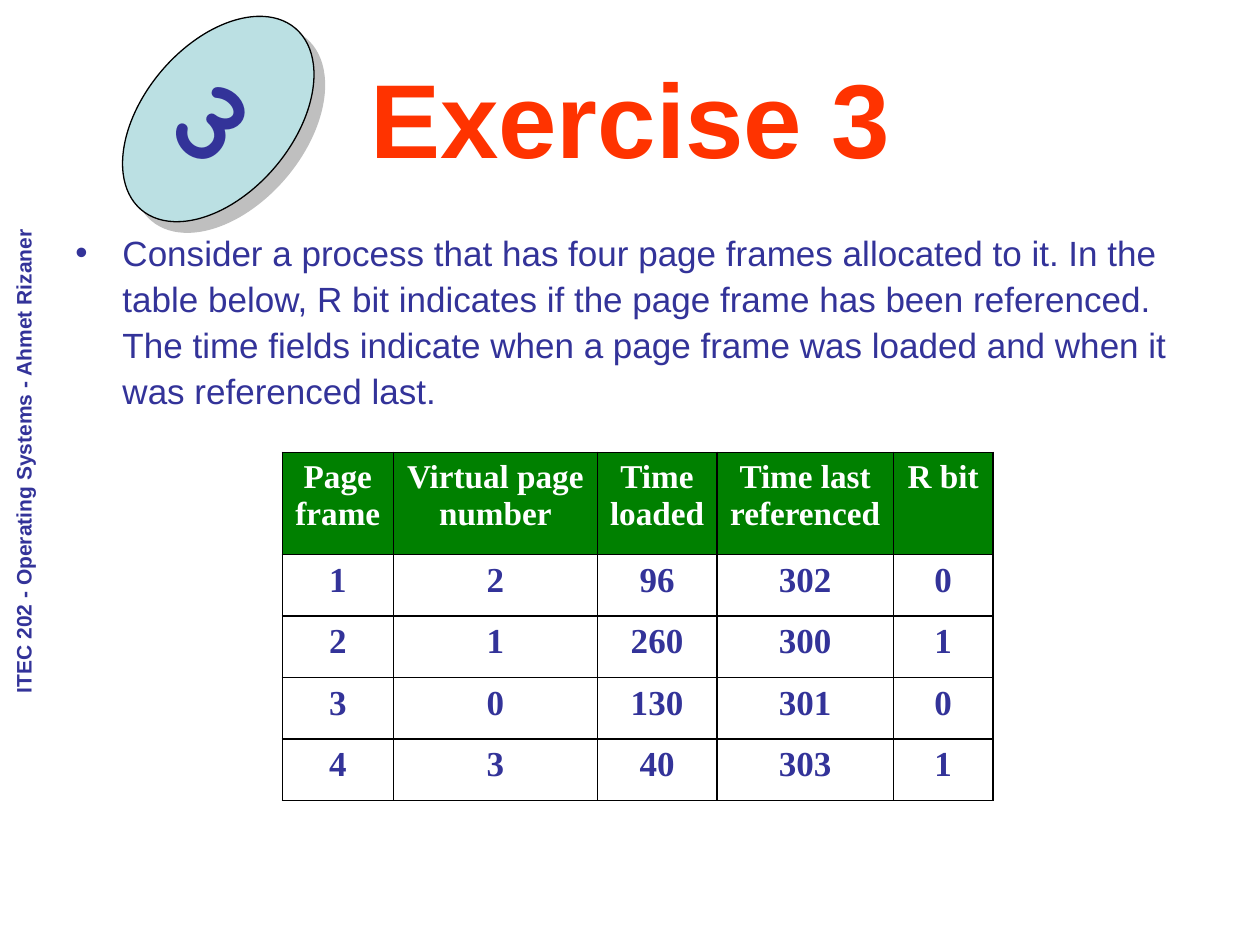
from dataclasses import dataclass

from lxml import etree
from pptx import Presentation
from pptx import util as u
from pptx.dml.color import RGBColor
from pptx.enum import shapes, text
from pptx.oxml import ns

Cm, Pt = u.Cm, u.Pt


@dataclass(frozen=True)
class Theme:
    ink: str = "333399"
    head: str = "FF3300"
    green: str = "008000"
    pale: str = "BBE0E3"
    white: str = "FFFFFF"
    line: str = "000000"
    shade: str = "808080"
    sans: str = "Arial"
    serif: str = "Times New Roman"
    comic: str = "Comic Neue"
    title: int = 60
    body: int = 20
    side: int = 12
    badge: int = 66
    label: int = 19


T = Theme()
HEADS = ["Page\nframe", "Virtual page\nnumber", "Time\nloaded",
         "Time last\nreferenced", "R bit"]
ROWS = [(1, 2, 96, 302, 0), (2, 1, 260, 300, 1),
        (3, 0, 130, 301, 0), (4, 3, 40, 303, 1)]
COLS = [2.24, 4.11, 2.41, 3.56, 2.01]
HEAD_H, ROW_H = 2.06, 1.24
TASK = ("Consider a process that has four page frames allocated to it. "
        "In the table below, R bit indicates if the page frame has been "
        "referenced. The time fields indicate when a page frame was loaded "
        "and when it was referenced last.")


def rgb(code):
    return RGBColor.from_string(code)


def add_sub(node, tag, **attrs):
    return etree.SubElement(node, ns.qn(tag), attrs)


def write(frame, words, size, color, face=T.sans, bold=True,
          align=text.PP_ALIGN.CENTER):
    frame.text = words
    for para in frame.paragraphs:
        para.alignment = align
        for run in para.runs:
            font = run.font
            font.name, font.size, font.bold = face, Pt(size), bold
            font.color.rgb = rgb(color)


def add_title(slide):
    title = slide.shapes.title
    title.left, title.top = Cm(1.27), Cm(0.76)
    title.width, title.height = Cm(22.86), Cm(3.18)
    title.text_frame.vertical_anchor = text.MSO_ANCHOR.MIDDLE
    write(title.text_frame, "Exercise 3", T.title, T.head)


def add_side(slide):
    box = slide.shapes.add_textbox(Cm(-7.9), Cm(8.92), Cm(16.74), Cm(0.76))
    box.rotation = 270
    box.text_frame.word_wrap = True
    write(box.text_frame, "ITEC 202 - Operating Systems - Ahmet Rizaner",
          T.side, T.ink)


def add_task(slide):
    box = slide.shapes.add_textbox(Cm(1.27), Cm(4.45), Cm(22.63), Cm(4.09))
    frame = box.text_frame
    frame.word_wrap = True
    write(frame, TASK, T.body, T.ink, bold=False, align=text.PP_ALIGN.LEFT)
    para = frame.paragraphs[0]
    para.line_spacing = 1.1
    # Hanging bullet
    props = para._p.get_or_add_pPr()
    props.set("marL", str(Cm(0.95)))
    props.set("indent", str(-Cm(0.95)))
    add_sub(props, "a:buFont", typeface=T.sans)
    add_sub(props, "a:buChar", char="•")


def add_badge(slide):
    oval = slide.shapes.add_shape(shapes.MSO_SHAPE.OVAL,
                                  Cm(2.9), Cm(0), Cm(3), Cm(4.8))
    oval.rotation = 40.4
    oval.fill.solid()
    oval.fill.fore_color.rgb = rgb(T.pale)
    oval.line.color.rgb = rgb(T.line)
    oval.line.width = Pt(0.75)
    frame = oval.text_frame
    frame.word_wrap = False
    frame.vertical_anchor = text.MSO_ANCHOR.MIDDLE
    write(frame, "3", T.badge, T.ink, T.comic)
    # Half-clear shadow, down and to the right
    oval.shadow.inherit = False
    effects = oval._element.spPr.find(ns.qn("a:effectLst"))
    shadow = add_sub(effects, "a:outerShdw", dist=str(Pt(8.5)),
                     dir="2700000", algn="ctr", rotWithShape="0")
    tint = add_sub(shadow, "a:srgbClr", val=T.shade)
    add_sub(tint, "a:alpha", val="50000")


def add_edges(cell):
    props = cell._tc.get_or_add_tcPr()
    for side in ("L", "R", "T", "B"):
        edge = add_sub(props, f"a:ln{side}", w=str(Pt(1)))
        fill = add_sub(edge, "a:solidFill")
        add_sub(fill, "a:srgbClr", val=T.line)


def add_grid(slide):
    high = HEAD_H + ROW_H * len(ROWS)
    grid = slide.shapes.add_table(len(ROWS) + 1, len(COLS), Cm(5.69), Cm(9.12),
                                  Cm(sum(COLS)), Cm(high)).table
    grid.first_row = grid.horz_banding = False
    for col, wide in zip(grid.columns, COLS):
        col.width = Cm(wide)
    for r, vals in enumerate([HEADS, *ROWS]):
        top = r == 0
        grid.rows[r].height = Cm(HEAD_H if top else ROW_H)
        for c, val in enumerate(vals):
            cell = grid.cell(r, c)
            add_edges(cell)
            if top:
                cell.fill.solid()
                cell.fill.fore_color.rgb = rgb(T.green)
            else:
                cell.fill.background()
            write(cell.text_frame, str(val), T.label if top else T.body,
                  T.white if top else T.ink, T.serif)


def main():
    deck = Presentation()
    deck.slide_width, deck.slide_height = Cm(25.4), Cm(19.05)
    slide = deck.slides.add_slide(deck.slide_layouts[5])
    # Heading and course label
    add_side(slide)
    add_title(slide)
    # Task, number badge and page table
    add_task(slide)
    add_badge(slide)
    add_grid(slide)
    deck.save("out.pptx")


if __name__ == "__main__":
    main()
